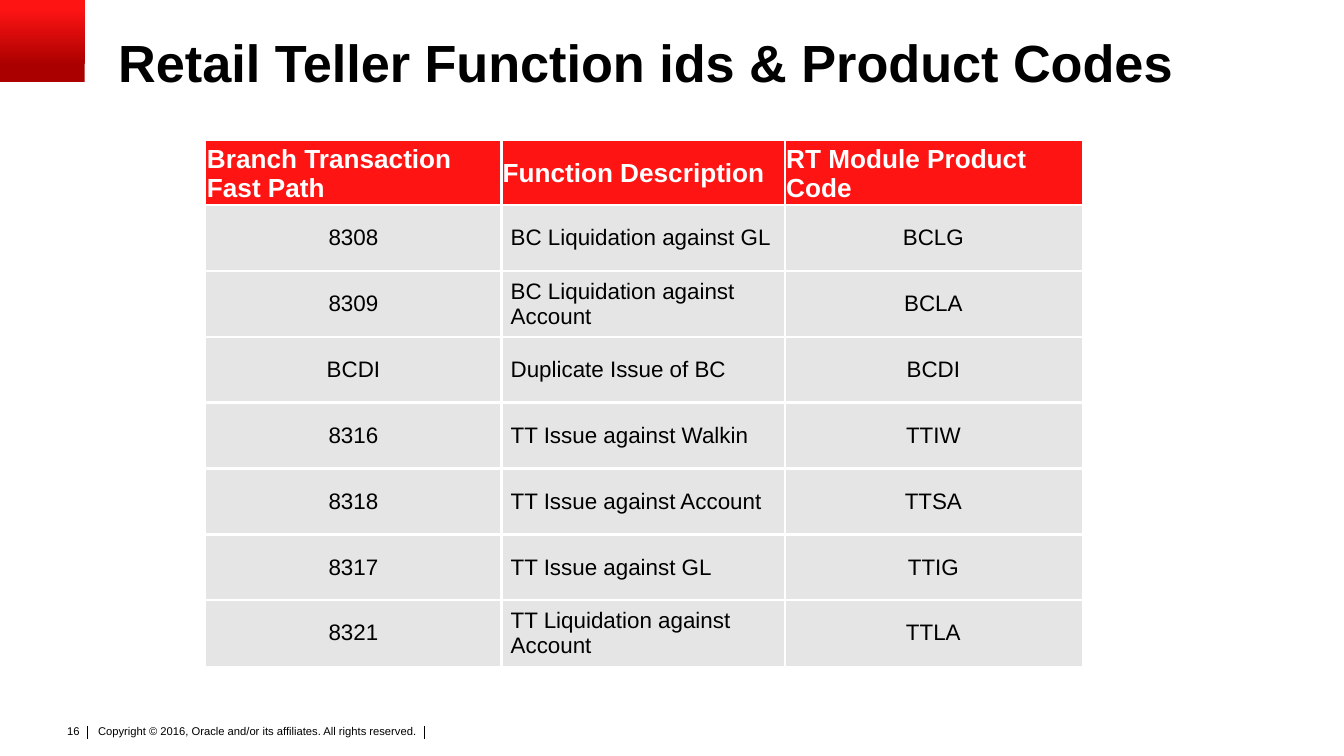
import dataclasses

import pptx
import pptx.dml.color
import pptx.enum.shapes
import pptx.enum.text
import pptx.oxml
import pptx.oxml.ns
import pptx.util

Inches = pptx.util.Inches
Pt = pptx.util.Pt
RGB = pptx.dml.color.RGBColor.from_string
ALIGN = pptx.enum.text.PP_ALIGN
ANCHOR = pptx.enum.text.MSO_ANCHOR


@dataclasses.dataclass(frozen=True)
class Theme:
    """Colours and type sizes of the deck."""

    font: str = "Arial"
    ink: str = "000000"
    paper: str = "FFFFFF"
    red: str = "FF1414"
    dark_red: str = "AA0000"
    grey: str = "E5E5E5"
    title: int = 28
    header: int = 14
    body: int = 12
    footer: int = 6


THEME = Theme()

HEADINGS = ["Branch Transaction Fast Path", "Function Description", "RT Module Product Code"]
PRODUCTS = [
    ("8308", "BC Liquidation against GL", "BCLG"),
    ("8309", "BC Liquidation against Account", "BCLA"),
    ("BCDI", "Duplicate Issue of BC", "BCDI"),
    ("8316", "TT Issue against Walkin", "TTIW"),
    ("8318", "TT Issue against Account", "TTSA"),
    ("8317", "TT Issue against GL", "TTIG"),
    ("8321", "TT Liquidation against Account", "TTLA"),
]


def write(frame, text, size, color=THEME.ink, bold=False, align=ALIGN.LEFT):
    """Write one run into the first paragraph of a frame and return the paragraph."""
    para = frame.paragraphs[0]
    para.alignment = align
    span = para.add_run()
    span.text = text
    span.font.name = THEME.font
    span.font.size = Pt(size)
    span.font.bold = bold
    span.font.color.rgb = RGB(color)
    return para


def add_label(page, left, top, width, height, insets=(0, 0)):
    """Add an empty wrapping text box and return its frame."""
    box = page.shapes.add_textbox(Inches(left), Inches(top), Inches(width), Inches(height))
    frame = box.text_frame
    frame.word_wrap = True
    frame.margin_left = frame.margin_right = Inches(insets[0])
    frame.margin_top = frame.margin_bottom = Inches(insets[1])
    return frame


def add_corner(page, left, top, width, height):
    """Add the red gradient block in the corner."""
    block = page.shapes.add_shape(
        pptx.enum.shapes.MSO_SHAPE.RECTANGLE,
        Inches(left), Inches(top), Inches(width), Inches(height),
    )
    block.shadow.inherit = False
    block.line.fill.background()
    block.fill.gradient()
    block.fill.gradient_angle = 90
    stops = [(0.2, THEME.dark_red), (0.9, THEME.red)]
    for stop, (position, color) in zip(block.fill.gradient_stops, stops):
        stop.position = position
        stop.color.rgb = RGB(color)


def add_title(page, left, top, width, height, text):
    """Add the slide title."""
    frame = add_label(page, left, top, width, height)
    frame.vertical_anchor = ANCHOR.MIDDLE
    write(frame, text, THEME.title, bold=True).line_spacing = 0.9


def add_footer(page, left, top, width, height, number, notice):
    """Add the page number and the copyright notice between two rules."""
    frame = add_label(page, left, top, 0.3, height, (0.1, 0.05))
    write(frame, number, THEME.footer, align=ALIGN.RIGHT)
    frame = add_label(page, left + 0.3, top + 0.03, width - 0.3, height, (0.04, 0.02))
    write(frame, notice, THEME.footer)
    for offset in (0.26, 2.77):
        x = Inches(left + offset)
        rule = page.shapes.add_connector(
            pptx.enum.shapes.MSO_CONNECTOR.STRAIGHT,
            x, Inches(top + 0.06), x, Inches(top + 0.16),
        )
        rule.line.color.rgb = RGB(THEME.ink)
        rule.line.width = Pt(0.5)
        properties = rule._element.spPr
        properties.append(properties.makeelement(pptx.oxml.ns.qn("a:effectLst"), {}))


def style_cell(cell, fill, insets, outer_sides):
    """Give a cell white inner borders, a fill, insets and middle anchoring."""
    properties = cell._tc.get_or_add_tcPr()
    white = f'<a:solidFill><a:srgbClr val="{THEME.paper}"/></a:solidFill>'
    for side in "LRTB":
        paint = "<a:noFill/>" if side in outer_sides else white
        properties.append(pptx.oxml.parse_xml(
            f'<a:ln{side} {pptx.oxml.ns.nsdecls("a")} w="{Pt(1.5)}">{paint}</a:ln{side}>'
        ))
    cell.fill.solid()
    cell.fill.fore_color.rgb = RGB(fill)
    cell.vertical_anchor = ANCHOR.MIDDLE
    cell.margin_left = cell.margin_right = Inches(insets[0])
    cell.margin_top = Inches(insets[1])
    cell.margin_bottom = 0


def add_product_table(page, left, top, widths, height, header_height, row_height):
    """Add the table of fast paths, functions and product codes."""
    holder = page.shapes.add_table(
        len(PRODUCTS) + 1, len(HEADINGS),
        Inches(left), Inches(top), Inches(sum(widths)), Inches(height),
    )
    table = holder.table
    table.horz_banding = False
    for column, width in zip(table.columns, widths):
        column.width = Inches(width)
    for number, values in enumerate([HEADINGS, *PRODUCTS]):
        is_header = number == 0
        table.rows[number].height = Inches(header_height if is_header else row_height)
        for index, value in enumerate(values):
            cell = table.cell(number, index)
            edges = {
                "L": index == 0,
                "R": index == len(HEADINGS) - 1,
                "T": is_header,
                "B": number == len(PRODUCTS),
            }
            outer_sides = [side for side, is_outer in edges.items() if is_outer]
            if is_header:
                style_cell(cell, THEME.red, (0.01, 0.01), outer_sides)
                write(cell.text_frame, value, THEME.header, THEME.paper, bold=True)
            else:
                style_cell(cell, THEME.grey, (0.07, 0), outer_sides)
                align = ALIGN.LEFT if index == 1 else ALIGN.CENTER
                write(cell.text_frame, value, THEME.body, align=align)
    holder.height = Inches(height)


def main():
    """Build and save the deck."""
    deck = pptx.Presentation()
    deck.slide_width = Inches(10)
    deck.slide_height = deck.slide_width * 9 // 16
    page = deck.slides.add_slide(deck.slide_layouts[6])
    add_footer(
        page, 0.39, 5.34, 3.04, 0.2, "16",
        "Copyright © 2016, Oracle and/or its affiliates. All rights reserved.",
    )
    add_corner(page, 0, 0, 0.63, 0.61)
    add_title(page, 0.88, 0.27, 9, 0.44, "Retail Teller Function ids & Product Codes")
    add_product_table(page, 1.53, 1.05, (2.2, 2.11, 2.21), 3.93, 0.32, 0.49)
    deck.save("out.pptx")


if __name__ == "__main__":
    main()
